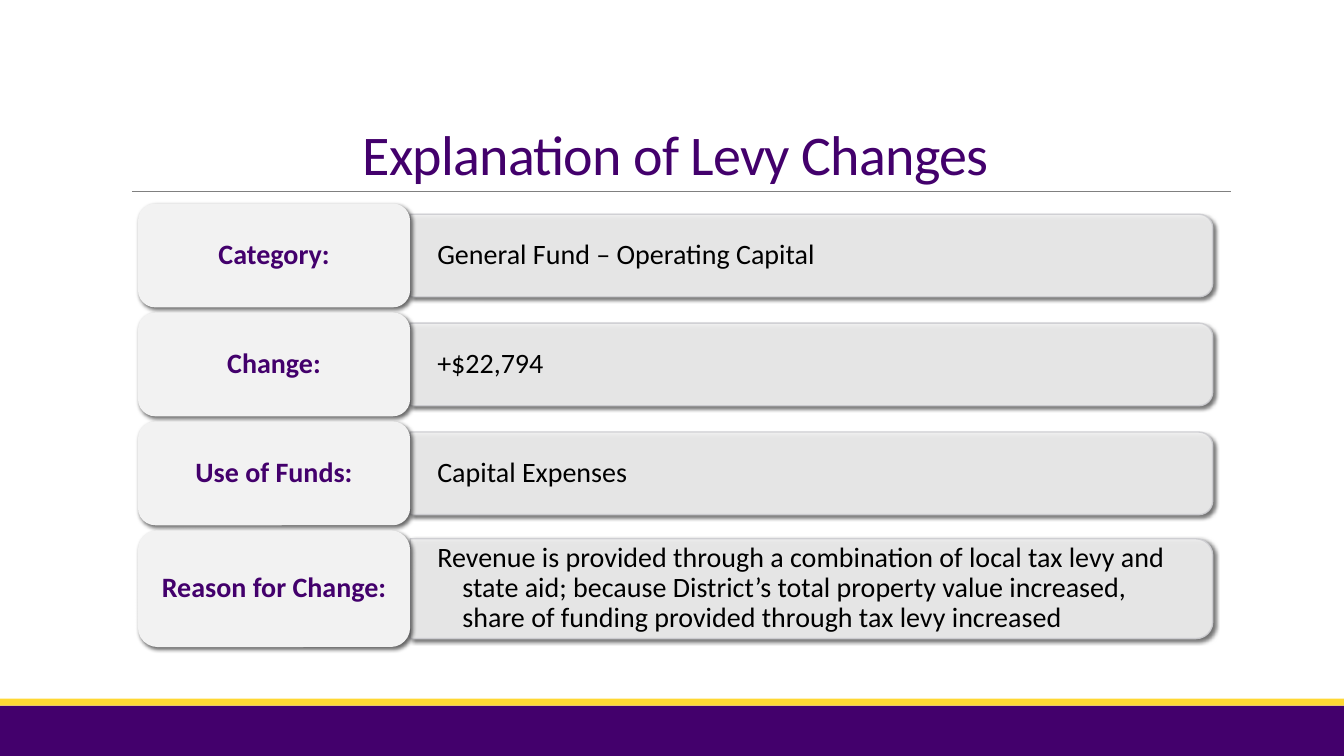
from lxml.etree import SubElement
from pptx import Presentation
from pptx.dml.color import RGBColor
from pptx.enum.shapes import MSO_CONNECTOR, MSO_SHAPE
from pptx.enum.text import MSO_ANCHOR, PP_ALIGN
from pptx.oxml.ns import qn
from pptx.util import Pt

# Content
TITLE = "Explanation of Levy Changes"
ROWS = [  # label, explanation, label height, bar height
    ("Category:", "General Fund – Operating Capital", 74.2, 59),
    ("Change:", "+$22,794", 74.2, 59),
    ("Use of Funds:", "Capital Expenses", 74.2, 59),
    ("Reason for Change:",
     "Revenue is provided through a combination of local tax levy and state aid; "
     "because District’s total property value increased, share of funding "
     "provided through tax levy increased", 83.4, 71.3),
]

# Style
PURPLE = RGBColor(0x43, 0x00, 0x6C)
YELLOW = RGBColor(0xFF, 0xD8, 0x33)
GRAY = RGBColor(0x80, 0x80, 0x80)
PANEL = RGBColor(0xF2, 0xF2, 0xF2)
EDGE = RGBColor(0xCD, 0xCD, 0xD1)
BLACK = RGBColor(0x00, 0x00, 0x00)
FONT = "Calibri"

# Layout in points
SLIDE_WIDTH, SLIDE_HEIGHT = 960, 540
ROWS_TOP, ROW_GAP = 145.4, 3.6
LABEL_LEFT, LABEL_WIDTH = 98.6, 194.4
BAR_LEFT, BAR_LENGTH = LABEL_LEFT + LABEL_WIDTH, 573.2
TEXT_WIDTH = 570

presentation = Presentation()
presentation.slide_width = Pt(SLIDE_WIDTH)
presentation.slide_height = Pt(SLIDE_HEIGHT)
slide = presentation.slides.add_slide(presentation.slide_layouts[6])


def add_panel(kind, left, top, width, height, color):
    shape = slide.shapes.add_shape(kind, Pt(left), Pt(top), Pt(width), Pt(height))
    shape.shadow.inherit = False
    shape.fill.solid()
    shape.fill.fore_color.rgb = color
    shape.line.fill.background()
    return shape


def set_alpha(fill, percent):
    color = fill.find(qn("a:srgbClr"))
    SubElement(color, qn("a:alpha"), val=str(percent * 1000))


def add_shadow(shape):
    effects = shape._element.spPr.find(qn("a:effectLst"))
    shadow = SubElement(effects, qn("a:outerShdw"), blurRad=str(Pt(3)),
                        dist=str(Pt(2)), dir=str(45 * 60000), rotWithShape="0")
    color = SubElement(shadow, qn("a:srgbClr"), val="000000")
    SubElement(color, qn("a:alpha"), val="60000")


def write(shape, text, size, color, spacing, anchor=MSO_ANCHOR.MIDDLE,
          align=PP_ALIGN.CENTER, bold=False):
    frame = shape.text_frame
    frame.word_wrap = True
    frame.vertical_anchor = anchor
    frame.text = text
    paragraph = frame.paragraphs[0]
    paragraph.alignment = align
    paragraph.line_spacing = spacing
    font = paragraph.runs[0].font
    font.name, font.size, font.bold = FONT, Pt(size), bold
    font.color.rgb = color
    return paragraph


# Footer bands and title rule
add_panel(MSO_SHAPE.RECTANGLE, 0, 504, SLIDE_WIDTH, 36, PURPLE)
add_panel(MSO_SHAPE.RECTANGLE, 0, 499, SLIDE_WIDTH, 5, YELLOW)
rule = slide.shapes.add_connector(MSO_CONNECTOR.STRAIGHT,
                                  Pt(94.3), Pt(136.6), Pt(879), Pt(136.6))
rule.line.color.rgb = GRAY
rule.line.width = Pt(0.5)
SubElement(rule._element.spPr, qn("a:effectLst"))

# Title
title = slide.shapes.add_textbox(Pt(86.4), Pt(22.3), Pt(792), Pt(114.5))
paragraph = write(title, TITLE, 40, PURPLE, 0.85, MSO_ANCHOR.BOTTOM)
paragraph.runs[0].font._element.set("spc", "-50")

# Rows: bar, explanation and label share one centre line
top = ROWS_TOP
for label_text, explanation, label_height, bar_height in ROWS:
    middle = top + label_height / 2

    # The bar stands upright and is turned so its round corners face right
    bar = add_panel(MSO_SHAPE.ROUND_2_SAME_RECTANGLE,
                    BAR_LEFT + (BAR_LENGTH - bar_height) / 2,
                    middle - BAR_LENGTH / 2, bar_height, BAR_LENGTH, PANEL)
    bar.rotation = 90
    bar.line.color.rgb = EDGE
    bar.line.width = Pt(1)
    properties = bar._element.spPr
    set_alpha(properties.find(qn("a:solidFill")), 90)
    set_alpha(properties.find(qn("a:ln")).find(qn("a:solidFill")), 90)
    add_shadow(bar)

    text_height = bar_height * 0.9
    box = slide.shapes.add_textbox(Pt(BAR_LEFT), Pt(middle - text_height / 2),
                                   Pt(TEXT_WIDTH), Pt(text_height))
    frame = box.text_frame
    frame.margin_left = frame.margin_right = Pt(19.4)
    frame.margin_top = frame.margin_bottom = Pt(10)
    paragraph = write(box, explanation, 20, BLACK, 0.9, align=PP_ALIGN.LEFT)
    indent = paragraph._p.get_or_add_pPr()
    indent.set("marL", str(Pt(18)))
    indent.set("indent", str(-Pt(18)))

    label = add_panel(MSO_SHAPE.ROUNDED_RECTANGLE, LABEL_LEFT, top,
                      LABEL_WIDTH, label_height, PANEL)
    add_shadow(label)
    write(label, label_text, 20, PURPLE, 0.9, bold=True)
    top += label_height + ROW_GAP

presentation.save("out.pptx")
